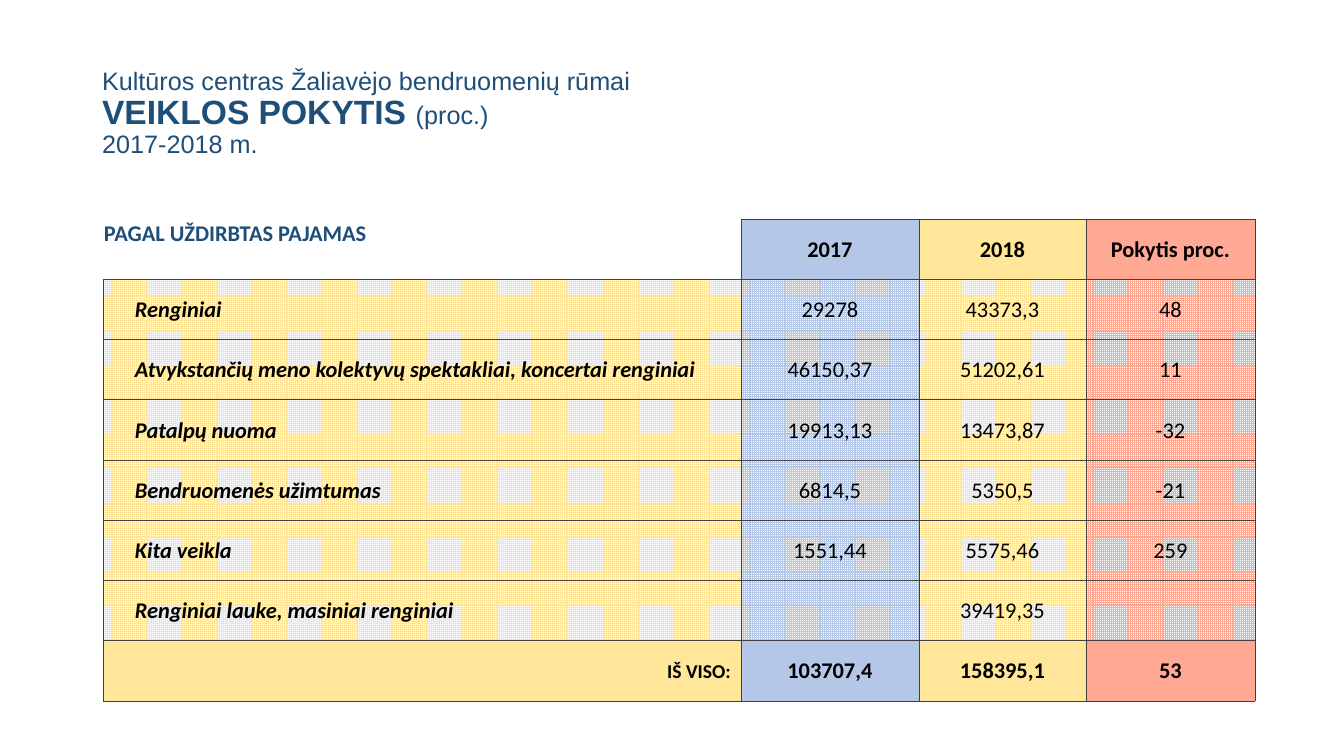
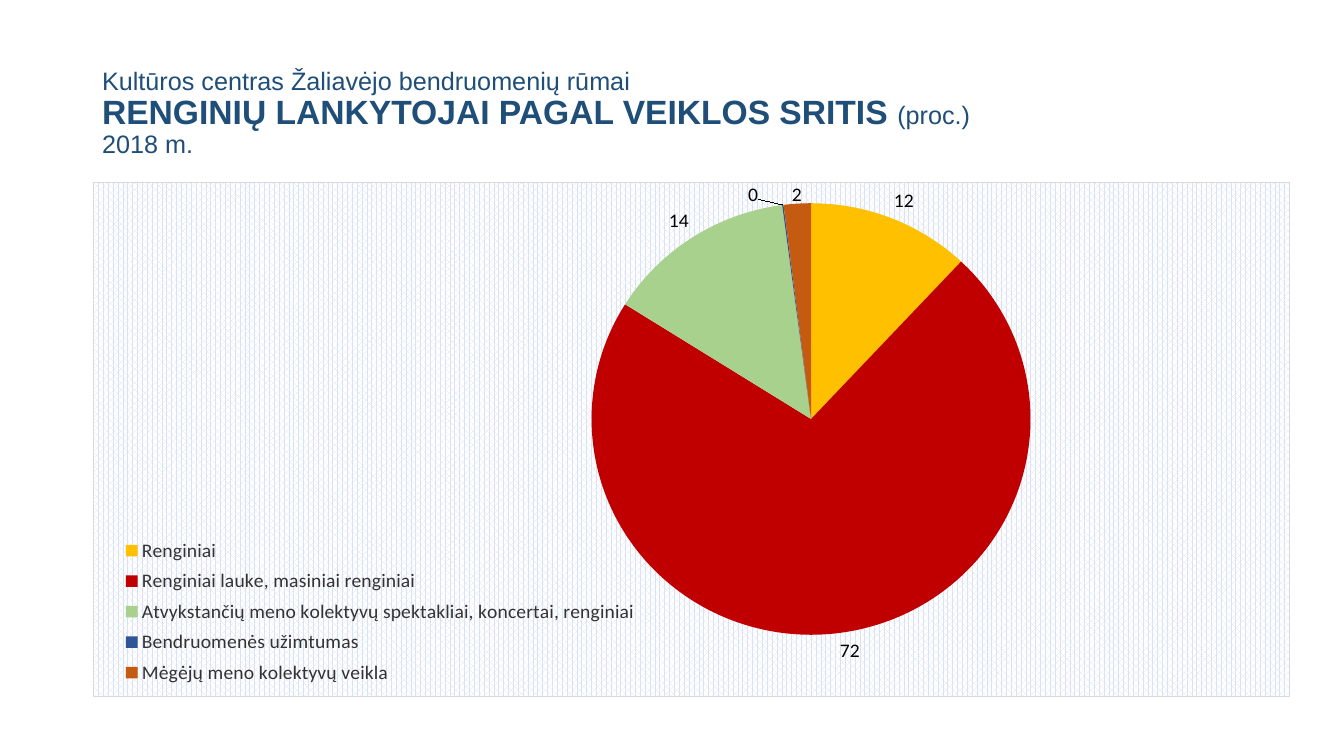
from lxml import etree
from pptx import Presentation
from pptx.chart.data import CategoryChartData
from pptx.dml.color import RGBColor
from pptx.enum.chart import XL_CHART_TYPE, XL_LABEL_POSITION, XL_LEGEND_POSITION
from pptx.enum.dml import MSO_PATTERN
from pptx.enum.text import MSO_ANCHOR, MSO_AUTO_SIZE, PP_ALIGN
from pptx.oxml import parse_xml
from pptx.oxml.ns import nsdecls, qn
from pptx.util import Pt

PIE = XL_CHART_TYPE.PIE
OUTSIDE_END = XL_LABEL_POSITION.OUTSIDE_END
LEGEND_BOTTOM = XL_LEGEND_POSITION.BOTTOM
SMALL_GRID = MSO_PATTERN.SMALL_GRID
TOP, MIDDLE = MSO_ANCHOR.TOP, MSO_ANCHOR.MIDDLE
LEFT, CENTER, RIGHT = PP_ALIGN.LEFT, PP_ALIGN.CENTER, PP_ALIGN.RIGHT

PX = 12192000 / 1344
COLORS = {
    "heading": "1F4E79", "text": "000000", "white": "FFFFFF", "border": "404040",
    "blue": "B4C7E7", "yellow": "FFE699", "red": "FFA893",
    "legend": "333333", "chart_pattern": "DAE3F3", "chart_border": "D9D9D9",
    "events": "FFC000", "outdoor": "C00000", "visiting": "A9D18E",
    "community": "2F5597", "amateur": "C55A11",
}


def px(*lengths):
    return [round(length * PX) for length in lengths]


def add_titled_slide(topic, period):
    slide = prs.slides.add_slide(layout)
    frame = slide.shapes.title.text_frame
    frame.auto_size = MSO_AUTO_SIZE.NONE
    frame.vertical_anchor = MIDDLE
    heading = frame.paragraphs[0]
    heading.alignment = LEFT
    heading.line_spacing = 0.9
    heading.font.name = "Arial"
    heading.font.size = Pt(18)
    heading.font.color.rgb = RGBColor.from_string(COLORS["heading"])
    heading.add_run().text = "Kultūros centras Žaliavėjo bendruomenių rūmai"
    heading.add_line_break()
    topic_run = heading.add_run()
    topic_run.text = topic + " "
    topic_run.font.size = Pt(24)
    topic_run.font.bold = True
    heading.add_run().text = "(proc.)"
    heading.add_line_break()
    heading.add_run().text = period
    return slide


# Presentation and the shared title position
prs = Presentation()
prs.slide_width, prs.slide_height = px(1344, 756)
layout = prs.slide_layouts[5]
layout_title = layout.placeholders[0]
layout_title.left, layout_title.top, layout_title.width, layout_title.height = px(92, 41, 1159, 146)

# Slide 1: income by activity
income_slide = add_titled_slide("VEIKLOS POKYTIS", "2017-2018 m.")
income_rows = [
    ("PAGAL UŽDIRBTAS PAJAMAS", "2017", "2018", "Pokytis proc."),
    ("Renginiai", "29278", "43373,3", "48"),
    ("Atvykstančių meno kolektyvų spektakliai, koncertai renginiai",
     "46150,37", "51202,61", "11"),
    ("Patalpų nuoma", "19913,13", "13473,87", "-32"),
    ("Bendruomenės užimtumas", "6814,5", "5350,5", "-21"),
    ("Kita veikla", "1551,44", "5575,46", "259"),
    ("Renginiai lauke, masiniai renginiai", "", "39419,35", ""),
    ("IŠ VISO:", "103707,4", "158395,1", "53"),
]
column_widths = px(638, 178, 167, 169)
column_colors = ["yellow", "blue", "yellow", "red"]
total_row = len(income_rows) - 1
income = income_slide.shapes.add_table(
    len(income_rows), len(column_widths), *px(103, 219, 1152, 482)).table
income.first_row = False
income.horz_banding = False
for column, width in zip(income.columns, column_widths):
    column.width = width

for r, row in enumerate(income_rows):
    for c, value in enumerate(row):
        cell = income.cell(r, c)
        is_heading = r == 0 and c == 0
        is_activity = c == 0 and 0 < r < total_row
        is_total_label = c == 0 and r == total_row

        # Borders come before the fill in the cell properties
        cell_properties = cell._tc.get_or_add_tcPr()
        for side in ("R", "B") if is_heading else ("L", "R", "T", "B"):
            cell_properties.append(parse_xml(
                f'<a:ln{side} {nsdecls("a")} w="6350"><a:solidFill>'
                f'<a:srgbClr val="{COLORS["border"]}"/></a:solidFill></a:ln{side}>'))

        color = RGBColor.from_string(COLORS[column_colors[c]])
        if is_heading:
            cell.fill.background()
        elif r in (0, total_row):
            cell.fill.solid()
            cell.fill.fore_color.rgb = color
        else:
            cell.fill.patterned()
            cell.fill.pattern = SMALL_GRID
            cell.fill.fore_color.rgb = color
            cell.fill.back_color.rgb = RGBColor.from_string(COLORS["white"])

        cell.margin_left, cell.margin_right, cell.margin_top, cell.margin_bottom = px(
            32 if is_activity else 1, 10 if is_total_label else 1, 1, 0)
        cell.vertical_anchor = TOP if is_heading else MIDDLE
        cell.text = value
        entry = cell.text_frame.paragraphs[0]
        entry.alignment = RIGHT if is_total_label else LEFT if c == 0 else CENTER
        entry.font.name = "Calibri"
        entry.font.size = Pt(14 if is_total_label else 16)
        entry.font.bold = c == 0 or r in (0, total_row)
        entry.font.italic = is_activity
        entry.font.color.rgb = RGBColor.from_string(COLORS["heading" if is_heading else "text"])

# Slide 2: visitors by activity; the thinnest slice rounds to 0 in its label
visitor_slide = add_titled_slide("RENGINIŲ LANKYTOJAI PAGAL VEIKLOS SRITIS", "2018 m.")
visitor_shares = [
    ("Renginiai", 12, "events"),
    ("Renginiai lauke, masiniai renginiai", 72, "outdoor"),
    ("Atvykstančių meno kolektyvų spektakliai, koncertai, renginiai", 14, "visiting"),
    ("Bendruomenės užimtumas", 0.1, "community"),
    ("Mėgėjų meno kolektyvų veikla", 2, "amateur"),
]
visitor_data = CategoryChartData(number_format="0")
visitor_data.categories = [activity for activity, _, _ in visitor_shares]
visitor_data.add_series("Series 1", [share for _, share, _ in visitor_shares])
visitors = visitor_slide.shapes.add_chart(PIE, *px(93, 174, 1197, 523), visitor_data).chart
visitors.has_title = False
visitors.font.name = "Calibri"
visitors.font.size = Pt(14)
visitors.font.color.rgb = RGBColor.from_string(COLORS["text"])
visitors.has_legend = True
visitors.legend.position = LEGEND_BOTTOM
visitors.legend.include_in_layout = False
visitors.legend.font.name = "Calibri"
visitors.legend.font.size = Pt(14)
visitors.legend.font.color.rgb = RGBColor.from_string(COLORS["legend"])

pie = visitors.plots[0]
pie.vary_by_categories = True
shares = pie.series[0]
shares.data_labels.show_value = True
shares.data_labels.number_format = "0"
shares.data_labels.number_format_is_linked = False
shares.data_labels.position = OUTSIDE_END
for i, (_, _, color_name) in enumerate(visitor_shares):
    slice_fill = shares.points[i].format.fill
    slice_fill.solid()
    slice_fill.fore_color.rgb = RGBColor.from_string(COLORS[color_name])

# Move the zero label aside on its leader line
shares.points[3].data_label.position = OUTSIDE_END
zero_label = shares.data_labels._element.find(qn("c:dLbl"))
zero_label.insert(1, parse_xml(
    f'<c:layout {nsdecls("c")}><c:manualLayout>'
    '<c:x val="-0.02"/><c:y val="0"/></c:manualLayout></c:layout>'))
zero_label.insert(2, parse_xml(
    f'<c:numFmt {nsdecls("c")} formatCode="0" sourceLinked="0"/>'))

# Place the pie and the legend by fractions of the chart
chart_root = visitors.element
plot_area = chart_root.find(".//" + qn("c:plotArea"))
legend = chart_root.find(".//" + qn("c:legend"))
for part, target, box in (
    (plot_area, "inner", (0.2, 0.04, 0.8, 0.84)),
    (legend, None, (0.02, 0.68, 0.44, 0.31)),
):
    for old_layout in part.findall(qn("c:layout")):
        part.remove(old_layout)
    part_layout = etree.Element(qn("c:layout"))
    manual = etree.SubElement(part_layout, qn("c:manualLayout"))
    if target:
        etree.SubElement(manual, qn("c:layoutTarget"), val=target)
    for mode in ("xMode", "yMode"):
        etree.SubElement(manual, qn("c:" + mode), val="edge")
    for dimension, fraction in zip("xywh", box):
        etree.SubElement(manual, qn("c:" + dimension), val=str(fraction))
    part.insert(1 if part is legend else 0, part_layout)

# Patterned chart background with a thin border
chart_body = chart_root.find(qn("c:chart"))
chart_body.addprevious(parse_xml(f'<c:roundedCorners {nsdecls("c")} val="0"/>'))
chart_body.addnext(parse_xml(
    f'<c:spPr {nsdecls("c", "a")}><a:pattFill prst="pct70">'
    f'<a:fgClr><a:srgbClr val="{COLORS["chart_pattern"]}"/></a:fgClr>'
    f'<a:bgClr><a:srgbClr val="{COLORS["white"]}"/></a:bgClr></a:pattFill>'
    f'<a:ln w="9525"><a:solidFill><a:srgbClr val="{COLORS["chart_border"]}"/>'
    '</a:solidFill></a:ln></c:spPr>'))

prs.save("out.pptx")
